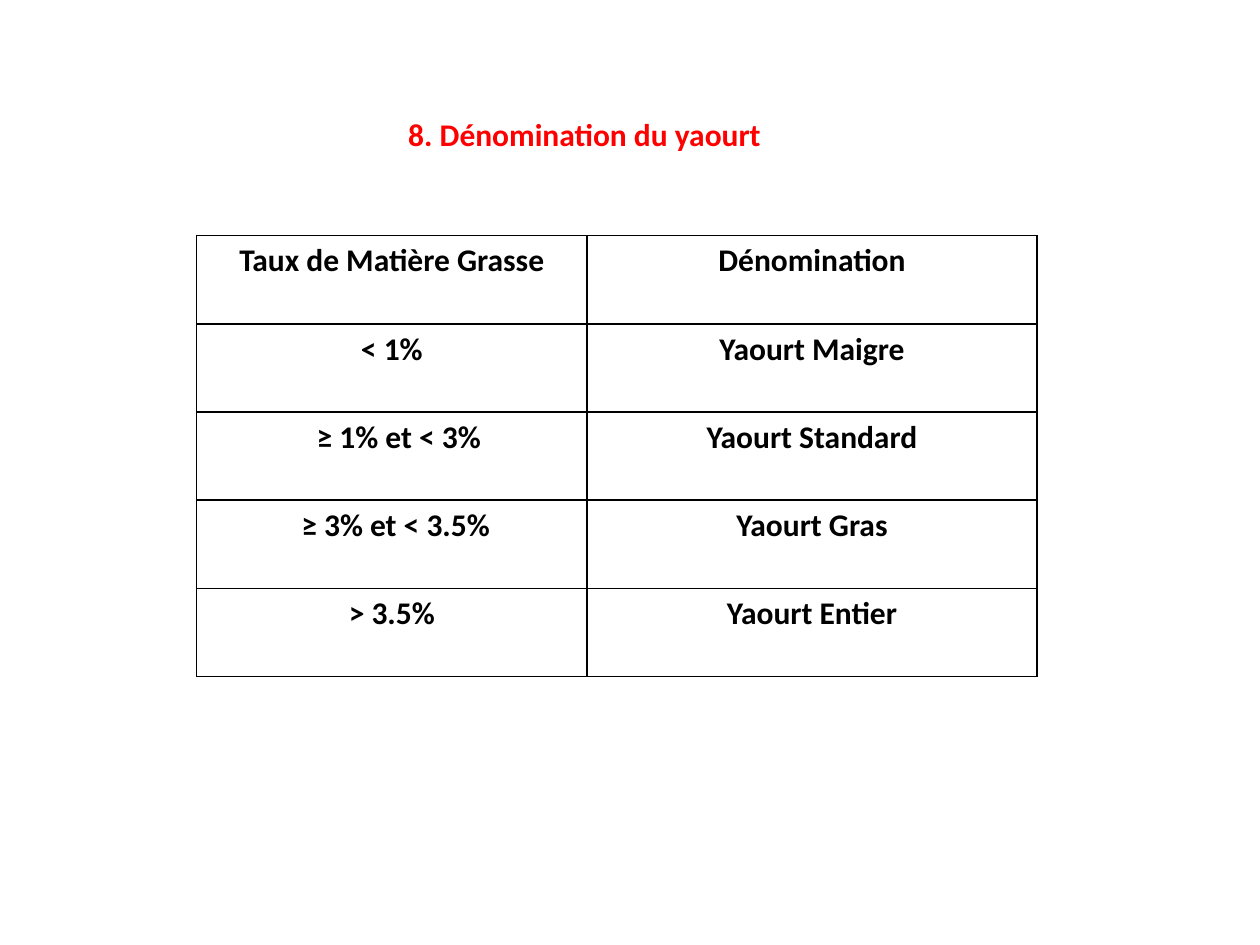
from lxml import etree
from pptx import Presentation
from pptx.dml.color import RGBColor
from pptx.enum.text import MSO_ANCHOR, MSO_AUTO_SIZE, PP_ALIGN
from pptx.oxml.ns import qn
from pptx.util import Inches, Pt

CENTER = PP_ALIGN.CENTER
MIDDLE = MSO_ANCHOR.MIDDLE
TOP = MSO_ANCHOR.TOP
NO_AUTOFIT = MSO_AUTO_SIZE.NONE
TITLE_ONLY = 5

COLORS = {"title": "FF0000", "text": "000000", "border": "000000"}
COLUMN_WIDTHS = [3.1, 3.57]
ROW_HEIGHT = 0.7
CELL_MARGIN = 0.1
YOGURTS = [
    ("Taux de Matière Grasse", "Dénomination"),
    ("< 1%", "Yaourt Maigre"),
    ("≥ 1% et < 3%", "Yaourt Standard"),
    ("≥ 3% et < 3.5%", "Yaourt Gras"),
    ("> 3.5%", "Yaourt Entier"),
]
EXTRA_INDENTS = {"≥ 1% et < 3%": 0.11, "≥ 3% et < 3.5%": 0.06}


def format_text(frame, color):
    paragraph = frame.paragraphs[0]
    paragraph.alignment = CENTER
    for run in paragraph.runs:
        run.font.name = "Calibri"
        run.font.size = Pt(18)
        run.font.bold = True
        run.font.color.rgb = RGBColor.from_string(COLORS[color])


def add_borders(cell):
    properties = cell._tc.get_or_add_tcPr()
    for position, side in enumerate(("lnL", "lnR", "lnT", "lnB")):
        line = etree.Element(qn(f"a:{side}"), w=str(Pt(1)))
        fill = etree.SubElement(line, qn("a:solidFill"))
        etree.SubElement(fill, qn("a:srgbClr"), val=COLORS["border"])
        properties.insert(position, line)


prs = Presentation()
prs.slide_width, prs.slide_height = Inches(10), Inches(7.5)
slide = prs.slides.add_slide(prs.slide_layouts[TITLE_ONLY])

heading = slide.shapes.title
heading.left, heading.top = Inches(3.1), Inches(0.86)
heading.width, heading.height = Inches(3.08), Inches(0.4)
heading.text_frame.text = "8. Dénomination du yaourt"
heading.text_frame.word_wrap = True
heading.text_frame.auto_size = NO_AUTOFIT
heading.text_frame.vertical_anchor = MIDDLE
format_text(heading.text_frame, "title")

table = slide.shapes.add_table(
    len(YOGURTS), len(COLUMN_WIDTHS), Inches(1.56), Inches(1.87),
    Inches(sum(COLUMN_WIDTHS)), Inches(ROW_HEIGHT * len(YOGURTS)),
).table
table.first_row = False
table.horz_banding = False
for column, width in zip(table.columns, COLUMN_WIDTHS):
    column.width = Inches(width)

for row, yogurt in zip(table.rows, YOGURTS):
    row.height = Inches(ROW_HEIGHT)
    for cell, label in zip(row.cells, yogurt):
        cell.text_frame.text = label
        cell.vertical_anchor = TOP
        cell.margin_left = Inches(CELL_MARGIN + EXTRA_INDENTS.get(label, 0))
        cell.fill.background()
        format_text(cell.text_frame, "text")
        add_borders(cell)

prs.save("out.pptx")
